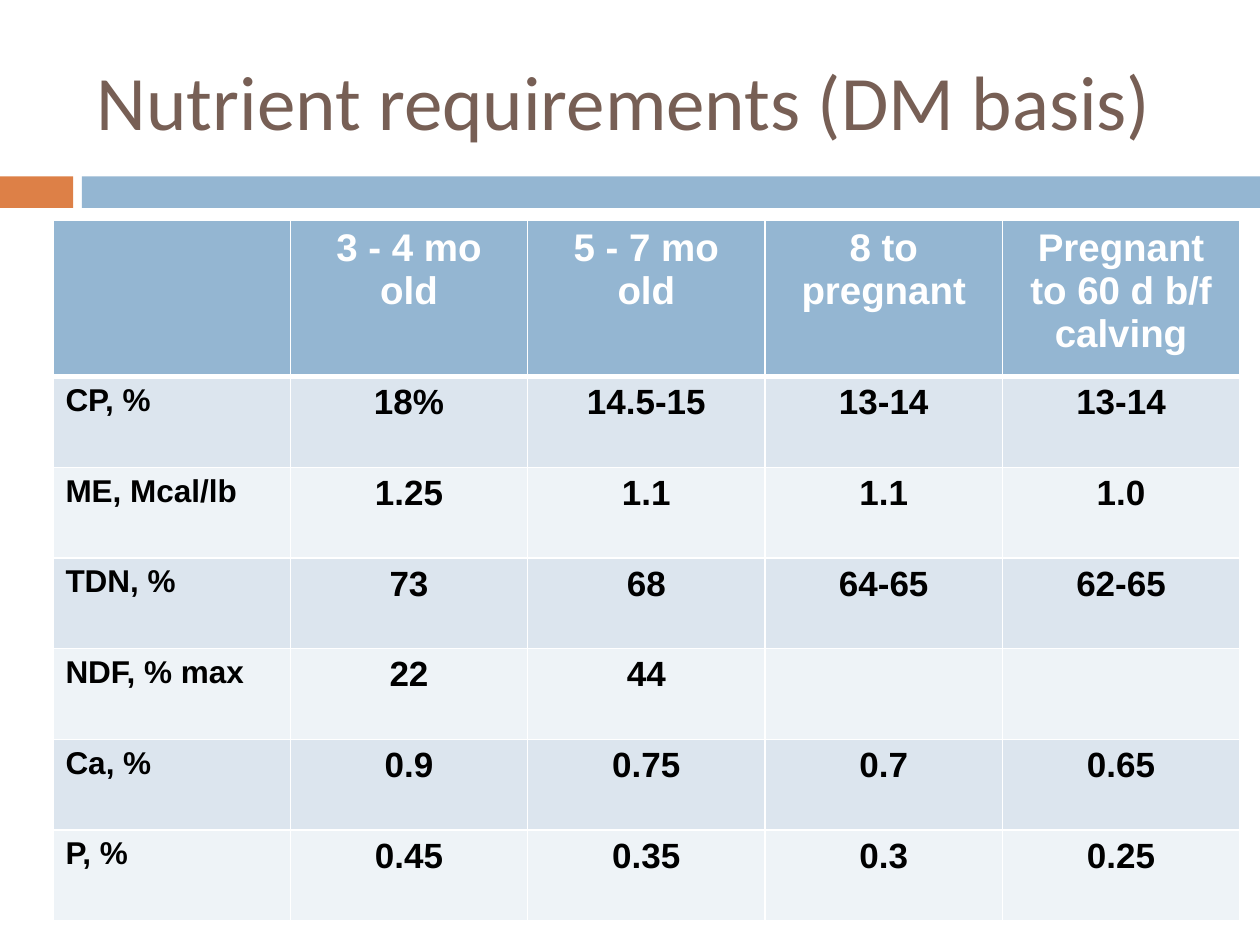
from lxml import etree
from pptx import Presentation
from pptx.dml.color import RGBColor
from pptx.enum.shapes import MSO_SHAPE
from pptx.enum.text import MSO_ANCHOR, PP_ALIGN
from pptx.oxml.ns import qn
from pptx.util import Inches, Pt

RECTANGLE = MSO_SHAPE.RECTANGLE
MIDDLE = MSO_ANCHOR.MIDDLE
LEFT, CENTER = PP_ALIGN.LEFT, PP_ALIGN.CENTER

WHITE = RGBColor(0xFF, 0xFF, 0xFF)
BLACK = RGBColor(0x00, 0x00, 0x00)
BROWN = RGBColor(0x77, 0x5F, 0x55)
ORANGE = RGBColor(0xDD, 0x80, 0x47)
BLUE = RGBColor(0x94, 0xB6, 0xD2)
BAND_DARK = RGBColor(0xDC, 0xE5, 0xEE)
BAND_LIGHT = RGBColor(0xEE, 0xF3, 0xF7)

TITLE_FORMAT = {"name": "Calibri", "size": Pt(44), "color": BROWN}
HEADER_FORMAT = {"name": "Arial", "size": Pt(22), "bold": True, "color": WHITE}
VALUE_FORMAT = HEADER_FORMAT | {"size": Pt(20), "color": BLACK}
LABEL_FORMAT = VALUE_FORMAT | {"size": Pt(18)}

REQUIREMENTS = [
    ["", "3 - 4 mo old", "5 - 7 mo old", "8 to pregnant", "Pregnant to 60 d b/f calving"],
    ["CP, %", "18%", "14.5-15", "13-14", "13-14"],
    ["ME, Mcal/lb", "1.25", "1.1", "1.1", "1.0"],
    ["TDN, %", "73", "68", "64-65", "62-65"],
    ["NDF, % max", "22", "44", "", ""],
    ["Ca, %", "0.9", "0.75", "0.7", "0.65"],
    ["P, %", "0.45", "0.35", "0.3", "0.25"],
]
TABLE_WIDTH, HEADER_HEIGHT, ROW_HEIGHT = 9.42, 1.24, 0.72


def write_text(frame, text, text_format, alignment=LEFT):
    para = frame.paragraphs[0]
    para.alignment = alignment
    if not text:
        return
    span = para.add_run()
    span.text = text
    for name, value in text_format.items():
        if name == "color":
            span.font.color.rgb = value
        else:
            setattr(span.font, name, value)


def add_bar(page, left, width, color):
    bar = page.shapes.add_shape(
        RECTANGLE, Inches(left), Inches(1.4), Inches(width), Inches(0.25))
    bar.shadow.inherit = False
    bar.fill.solid()
    bar.fill.fore_color.rgb = color
    bar.line.fill.background()


def add_title(page, text):
    box = page.shapes.add_textbox(Inches(0.67), Inches(0.25), Inches(8.92), Inches(1.08))
    box.text_frame.word_wrap = True
    box.text_frame.vertical_anchor = MIDDLE
    write_text(box.text_frame, text, TITLE_FORMAT)


def set_borders(cell, widths, color):
    properties = cell._tc.get_or_add_tcPr()
    for side, width in widths.items():
        line = etree.SubElement(properties, qn(f"a:ln{side}"), w=str(Pt(width)))
        fill = etree.SubElement(line, qn("a:solidFill"))
        etree.SubElement(fill, qn("a:srgbClr"), val=str(color))


def style_cell(cell, row, column, text):
    # The rule under the header is heavier than the others
    widths = {"L": 1, "R": 1, "T": 3 if row == 1 else 1, "B": 3 if row == 0 else 1}
    set_borders(cell, widths, WHITE)
    cell.fill.solid()
    if row == 0:
        color, text_format = BLUE, HEADER_FORMAT
    else:
        color = BAND_DARK if row % 2 else BAND_LIGHT
        text_format = VALUE_FORMAT if column else LABEL_FORMAT
    cell.fill.fore_color.rgb = color
    write_text(cell.text_frame, text, text_format, CENTER if column else LEFT)


def add_requirements_table(page, rows):
    height = HEADER_HEIGHT + ROW_HEIGHT * (len(rows) - 1)
    table = page.shapes.add_table(
        len(rows), len(rows[0]), Inches(0.42), Inches(1.75),
        Inches(TABLE_WIDTH), Inches(height)).table
    for column in table.columns:
        column.width = Inches(TABLE_WIDTH / len(rows[0]))
    for row, texts in enumerate(rows):
        table.rows[row].height = Inches(ROW_HEIGHT if row else HEADER_HEIGHT)
        for column, text in enumerate(texts):
            style_cell(table.cell(row, column), row, column, text)


def main():
    deck = Presentation()
    deck.slide_width, deck.slide_height = Inches(10), Inches(7.5)
    page = deck.slides.add_slide(deck.slide_layouts[6])

    # Bars under the title
    add_bar(page, 0, 0.58, ORANGE)
    add_bar(page, 0.65, 9.35, BLUE)

    # Title and table
    add_title(page, "Nutrient requirements (DM basis)")
    add_requirements_table(page, REQUIREMENTS)

    deck.save("out.pptx")


if __name__ == "__main__":
    main()
